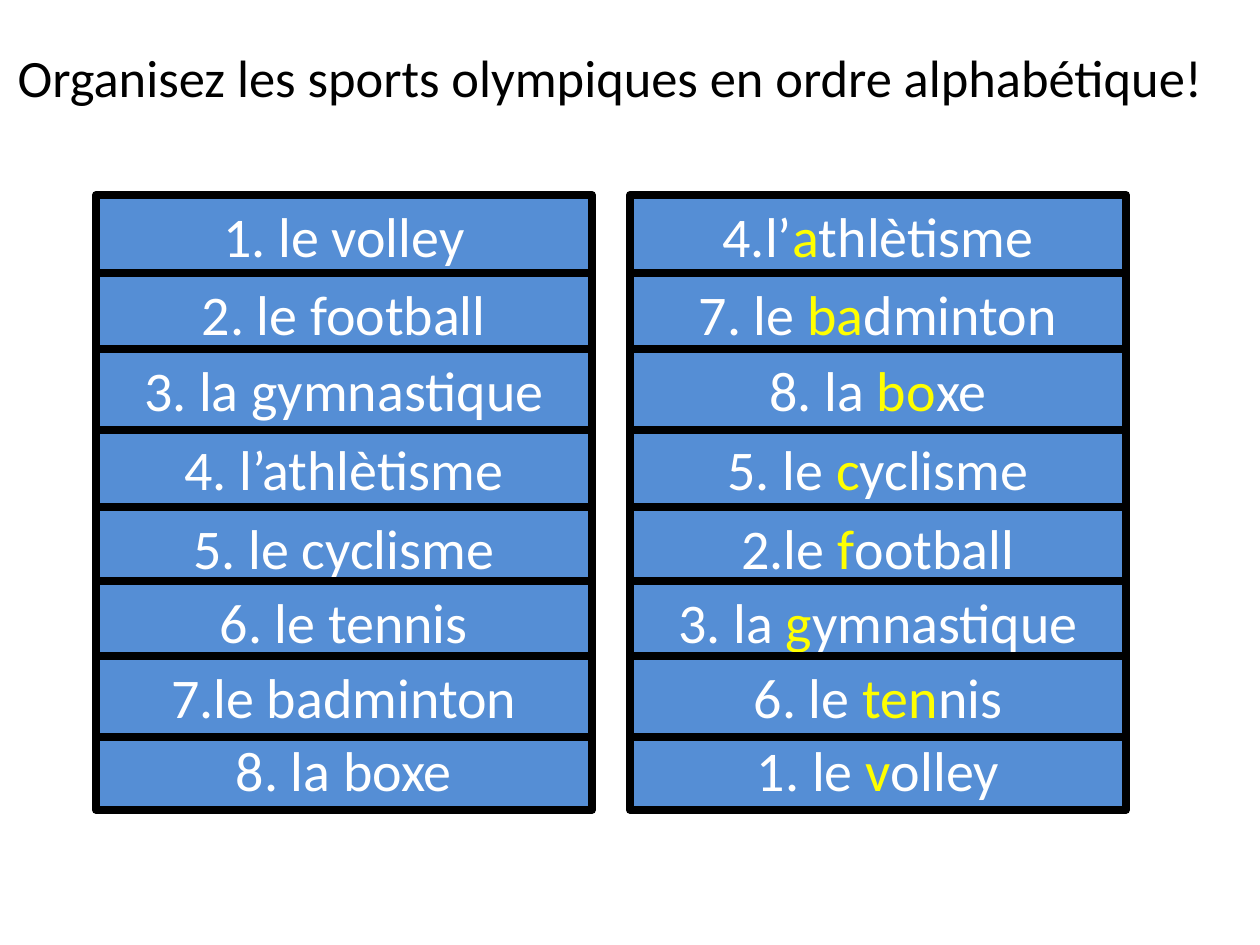
from pptx import Presentation
from pptx.dml.color import RGBColor
from pptx.enum.shapes import MSO_SHAPE
from pptx.enum.text import MSO_ANCHOR, PP_ALIGN
from pptx.util import Emu, Pt

PX = 914400 // 126  # one px in EMU

BLUE = RGBColor(0x55, 0x8E, 0xD5)
BLACK = RGBColor(0, 0, 0)
WHITE = RGBColor(0xFF, 0xFF, 0xFF)
YELLOW = RGBColor(0xFF, 0xFF, 0)

TITLE = "Organisez les sports olympiques en ordre alphabétique!"
CARD_HEIGHT = 81
CARD_TOPS = [0, 78, 154, 233, 312, 386, 461, 534]  # within a column
STACKING = [3, 0, 4, 1, 2, 5, 7, 6]  # cards overlap: back to front

# Each card: text before, highlighted letters, text after
QUESTIONS = [
    ("1. le volley",),
    ("2. le football",),
    ("3. la gymnastique",),
    ("4. l’athlètisme",),
    ("5. le cyclisme",),
    ("6. le tennis",),
    ("7.le badminton",),
    ("8. la boxe",),
]
ANSWERS = [
    ("4.l’", "a", "thlètisme"),
    ("7. le ", "ba", "dminton"),
    ("8. la ", "bo", "xe"),
    ("5. le ", "c", "yclisme"),
    ("2.le ", "f", "ootball"),
    ("3. la ", "g", "ymnastique"),
    ("6. le ", "ten", "nis"),
    ("1. le ", "v", "olley"),
]


def px(*lengths):
    return [Emu(length * PX) for length in lengths]


def add_span(para, text, size, color):
    span = para.add_run()
    span.text = text
    for name, value in {"name": "Calibri", "size": Pt(size)}.items():
        setattr(span.font, name, value)
    span.font.color.rgb = color


def place_title(page, left, top, width, height):
    title = page.shapes.title
    title.left, title.top, title.width, title.height = px(left, top, width, height)
    frame = title.text_frame
    for name, value in {"word_wrap": True, "vertical_anchor": MSO_ANCHOR.TOP}.items():
        setattr(frame, name, value)
    para = frame.paragraphs[0]
    para.alignment = PP_ALIGN.LEFT
    add_span(para, TITLE, 30, BLACK)


def add_card(page, left, top, width, height, parts):
    card = page.shapes.add_shape(MSO_SHAPE.RECTANGLE, *px(left, top, width, height))
    card.shadow.inherit = False
    card.fill.solid()
    card.fill.fore_color.rgb = BLUE
    card.line.color.rgb = BLACK
    card.line.width = Pt(4.5)
    frame = card.text_frame
    for name, value in {"word_wrap": True, "vertical_anchor": MSO_ANCHOR.TOP}.items():
        setattr(frame, name, value)
    para = frame.paragraphs[0]
    para.alignment = PP_ALIGN.CENTER
    for text, color in zip(parts, (WHITE, YELLOW, WHITE)):
        add_span(para, text, 32, color)


def add_column(page, left, top, width, cards):
    for row in STACKING:
        add_card(page, left, top + CARD_TOPS[row], width, CARD_HEIGHT, cards[row])


def main():
    deck = Presentation()
    deck.slide_width, deck.slide_height = px(1260, 945)
    page = deck.slides.add_slide(deck.slide_layouts[5])  # title only

    # Heading
    place_title(page, 5, 39, 1260, 77)

    # Sports as given, then in alphabetical order
    add_column(page, 96, 195, 496, QUESTIONS)
    add_column(page, 630, 195, 496, ANSWERS)

    deck.save("out.pptx")


if __name__ == "__main__":
    main()
